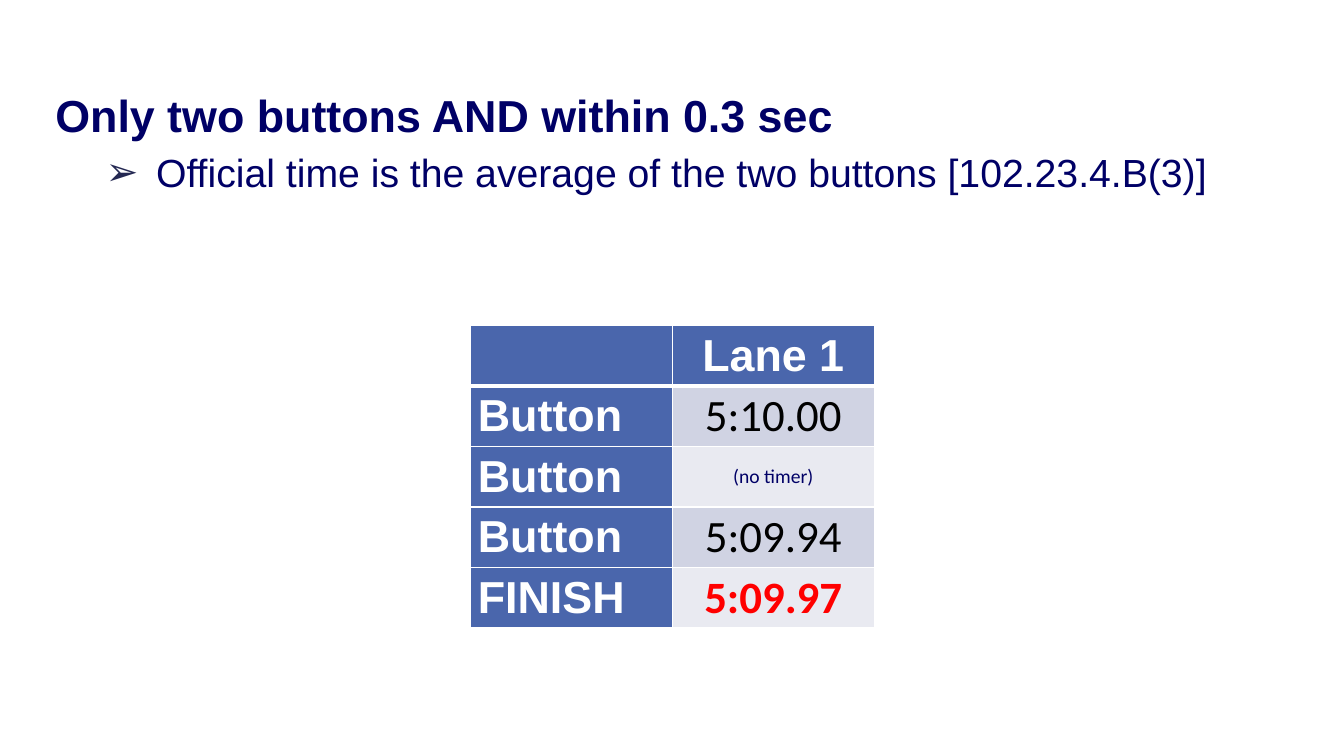
from pptx import Presentation
from pptx.dml.color import RGBColor
from pptx.enum.text import MSO_ANCHOR, PP_ALIGN
from pptx.oxml.ns import qn
from pptx.util import Inches, Pt
from lxml.etree import SubElement, Element

TITLE = "Only two buttons AND within 0.3 sec"
POINT = "Official time is the average of the two buttons [102.23.4.B(3)]"
ROWS = [
    ("", "Lane 1"),
    ("Button", "5:10.00"),
    ("Button", "(no timer)"),
    ("Button", "5:09.94"),
    ("FINISH", "5:09.97"),
]
THEME = {
    "head": "Arial", "body": "Calibri",
    "navy": "000066", "bullet": "242852", "blue": "4A66AC",
    "white": "FFFFFF", "black": "000000", "red": "FF0000",
    "bands": ("E9EAF1", "D0D3E3"),
    "big": 32, "mid": 28, "small": 14,
}
COL, ROW = 2, 0.6


def style(para, font, size, color, bold):
    for run in para.runs:
        run.font.name = THEME[font]
        run.font.size = Pt(THEME[size])
        run.font.color.rgb = RGBColor.from_string(THEME[color])
        run.font.bold = bold


def add_bullet(para):
    props = para._p.get_or_add_pPr()
    props.set("marL", str(Inches(1)))
    props.set("indent", str(Inches(-0.5)))
    color = SubElement(props, qn("a:buClr"))
    SubElement(color, qn("a:srgbClr"), val=THEME["bullet"])
    SubElement(props, qn("a:buFont"), typeface=THEME["head"])
    SubElement(props, qn("a:buChar"), char="➢")


def add_border(cell, widths):
    props = cell._tc.get_or_add_tcPr()
    for i, (side, width) in enumerate(zip("LRTB", widths)):
        line = Element(qn("a:ln" + side), w=str(Pt(width)))
        fill = SubElement(line, qn("a:solidFill"))
        SubElement(fill, qn("a:srgbClr"), val=THEME["white"])
        props.insert(i, line)


def value_style(text, row):
    if text == "(no timer)":
        return "body", "small", "navy", False
    if row == len(ROWS) - 1:
        return "body", "big", "red", True
    return "body", "big", "black", False


def add_text(slide):
    box = slide.shapes.add_textbox(Inches(0.45), Inches(0.69), Inches(12.42), Inches(2.25))
    frame = box.text_frame
    frame.word_wrap = True
    frame.margin_left = frame.margin_right = Inches(0.1)
    frame.margin_top = frame.margin_bottom = Inches(0.1)
    title, point = frame.paragraphs[0], frame.add_paragraph()
    title.text, point.text = TITLE, POINT
    point.level = 1
    title.line_spacing = point.line_spacing = 1.15
    style(title, "head", "big", "navy", True)
    style(point, "head", "mid", "navy", False)
    add_bullet(point)


def add_times(slide):
    count = len(ROWS)
    table = slide.shapes.add_table(
        count, 2, Inches(4.67), Inches(3.23), Inches(2 * COL), Inches(count * ROW)
    ).table
    for col in table.columns:
        col.width = Inches(COL)
    for r, texts in enumerate(ROWS):
        table.rows[r].height = Inches(ROW)
        for c, text in enumerate(texts):
            cell = table.cell(r, c)
            label = r == 0 or c == 0
            cell.text_frame.text = text
            cell.vertical_anchor = MSO_ANCHOR.MIDDLE
            cell.margin_left = cell.margin_right = Inches(0.07)
            cell.margin_top = cell.margin_bottom = 0
            para = cell.text_frame.paragraphs[0]
            para.alignment = PP_ALIGN.CENTER if c else PP_ALIGN.LEFT
            look = ("head", "big", "white", True) if label else value_style(text, r)
            style(para, *look)
            cell.fill.solid()
            fill = THEME["blue"] if label else THEME["bands"][r % 2]
            cell.fill.fore_color.rgb = RGBColor.from_string(fill)
            add_border(cell, (1, 1, 3 if r == 1 else 1, 3 if r == 0 else 1))


def main():
    deck = Presentation()
    deck.slide_width, deck.slide_height = Inches(13.33), Inches(7.5)
    slide = deck.slides.add_slide(deck.slide_layouts[6])
    add_text(slide)
    add_times(slide)
    deck.save("out.pptx")


if __name__ == "__main__":
    main()
